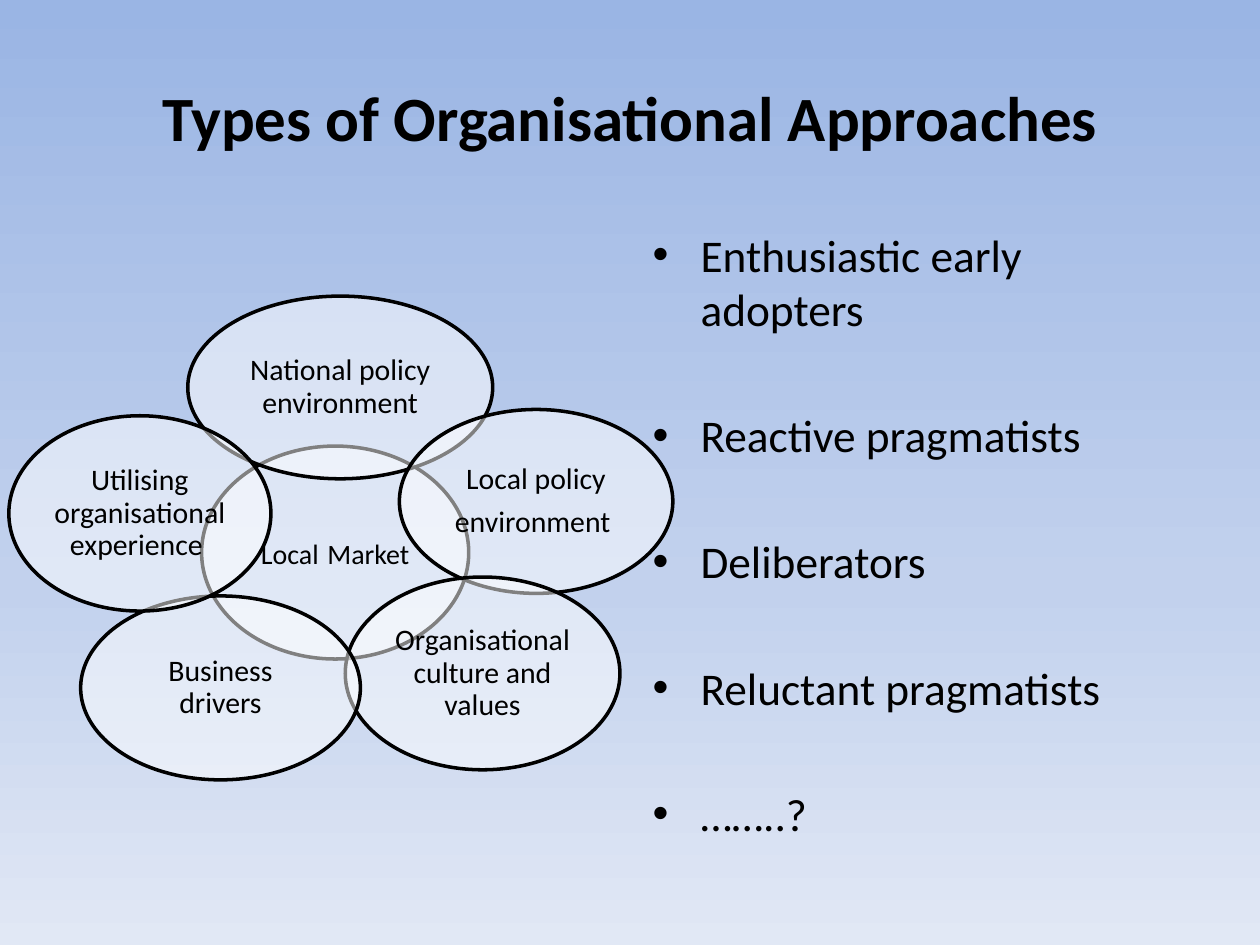
from copy import deepcopy
from dataclasses import dataclass

from lxml.etree import SubElement
from pptx import Presentation
from pptx.dml.color import RGBColor
from pptx.enum.shapes import MSO_SHAPE as Preset
from pptx.enum.text import MSO_ANCHOR as Anchor, MSO_AUTO_SIZE as AutoSize, PP_ALIGN as Align
from pptx.oxml.ns import qn
from pptx.slide import Slide
from pptx.text.text import _Paragraph as Paragraph
from pptx.util import Inches, Pt

BLACK = RGBColor(0x00, 0x00, 0x00)
WHITE = RGBColor(0xFF, 0xFF, 0xFF)
SKY_TOP = RGBColor(0x9A, 0xB5, 0xE4)
SKY_MIDDLE = RGBColor(0xC2, 0xD1, 0xED)
SKY_BOTTOM = RGBColor(0xE1, 0xE8, 0xF5)
FONT = "Calibri"


@dataclass(frozen=True)
class Influence:
    left: float
    top: float
    width: float
    height: float
    lines: tuple[tuple[str, ...], ...]
    size: float = 17


INFLUENCES = (
    Influence(1.6, 3.54, 2.12, 1.69, (("Local", " ", "Market"),), 16),
    Influence(1.49, 2.35, 2.42, 1.45, (("National policy environment",),)),
    Influence(3.17, 3.25, 2.17, 1.46, (("Local policy",), ("environment ",))),
    Influence(2.74, 4.58, 2.18, 1.53, (("Organisational culture and values",),)),
    Influence(0.64, 4.73, 2.22, 1.46, (("Business drivers",),)),
    Influence(0.07, 3.3, 2.08, 1.55, (("Utilising organisational experience ",),)),
)
APPROACHES = (
    "Enthusiastic early adopters",
    "Reactive pragmatists",
    "Deliberators",
    "Reluctant pragmatists",
    "……..?",
)


def set_font(para: Paragraph, size: float, bold: bool = False) -> None:
    para.font.name = FONT
    para.font.size = Pt(size)
    para.font.bold = bold
    para.font.color.rgb = BLACK


def place(shape, left: float, top: float, width: float, height: float) -> None:
    shape.left, shape.top = Inches(left), Inches(top)
    shape.width, shape.height = Inches(width), Inches(height)


def paint_background(page: Slide) -> None:
    fill = page.background.fill
    fill.gradient()
    fill.gradient_angle = 270
    first = page._element.find(".//" + qn("a:gs"))
    first.addnext(deepcopy(first))
    stops = ((0, SKY_TOP), (0.62, SKY_MIDDLE), (1, SKY_BOTTOM))
    for stop, (position, color) in zip(fill.gradient_stops, stops):
        stop.position = position
        stop.color.rgb = color


def add_title(page: Slide) -> None:
    title = page.shapes.title
    place(title, 0.5, 0.3, 9, 1.25)
    title.text_frame.text = "Types of Organisational Approaches"
    title.text_frame.vertical_anchor = Anchor.MIDDLE
    para = title.text_frame.paragraphs[0]
    para.alignment = Align.CENTER
    set_font(para, 36, bold=True)


def add_approaches(page: Slide) -> None:
    body = page.placeholders[1]
    place(body, 5.08, 1.75, 4.42, 4.95)
    frame = body.text_frame
    frame.text = "\n".join(APPROACHES)
    frame.auto_size = AutoSize.NONE
    for index, para in enumerate(frame.paragraphs):
        properties = para._p.get_or_add_pPr()
        properties.set("marL", str(Inches(0.38)))
        properties.set("indent", str(Inches(-0.38)))
        para.space_before = Pt(41 if index else 0)
        set_font(para, 25.9)


def add_influence(page: Slide, influence: Influence) -> None:
    oval = page.shapes.add_shape(
        Preset.OVAL, Inches(influence.left), Inches(influence.top),
        Inches(influence.width), Inches(influence.height))
    oval.shadow.inherit = False
    oval.fill.solid()
    oval.fill.fore_color.rgb = WHITE
    color = oval._element.spPr.find(".//" + qn("a:srgbClr"))
    SubElement(color, qn("a:alpha"), val="50000")
    oval.line.color.rgb = BLACK
    oval.line.width = Pt(2)

    frame = oval.text_frame
    frame.word_wrap = True
    frame.vertical_anchor = Anchor.MIDDLE
    frame.margin_left = frame.margin_right = Inches(0.02)
    frame.margin_top = frame.margin_bottom = Inches(0.02)
    for index, words in enumerate(influence.lines):
        para = frame.add_paragraph() if index else frame.paragraphs[0]
        para.alignment = Align.CENTER
        para.line_spacing = 0.9
        para.space_before = Pt(6 if index else 0)
        set_font(para, influence.size)
        for word in words:
            span = para.add_run()
            span.text = word
            if word == " ":
                span.font.size = Pt(22)


def main() -> None:
    deck = Presentation()
    deck.slide_width, deck.slide_height = Inches(10), Inches(7.5)
    page = deck.slides.add_slide(deck.slide_layouts[1])
    paint_background(page)
    add_title(page)
    add_approaches(page)
    for influence in INFLUENCES:
        add_influence(page, influence)
    deck.save("out.pptx")


if __name__ == "__main__":
    main()
